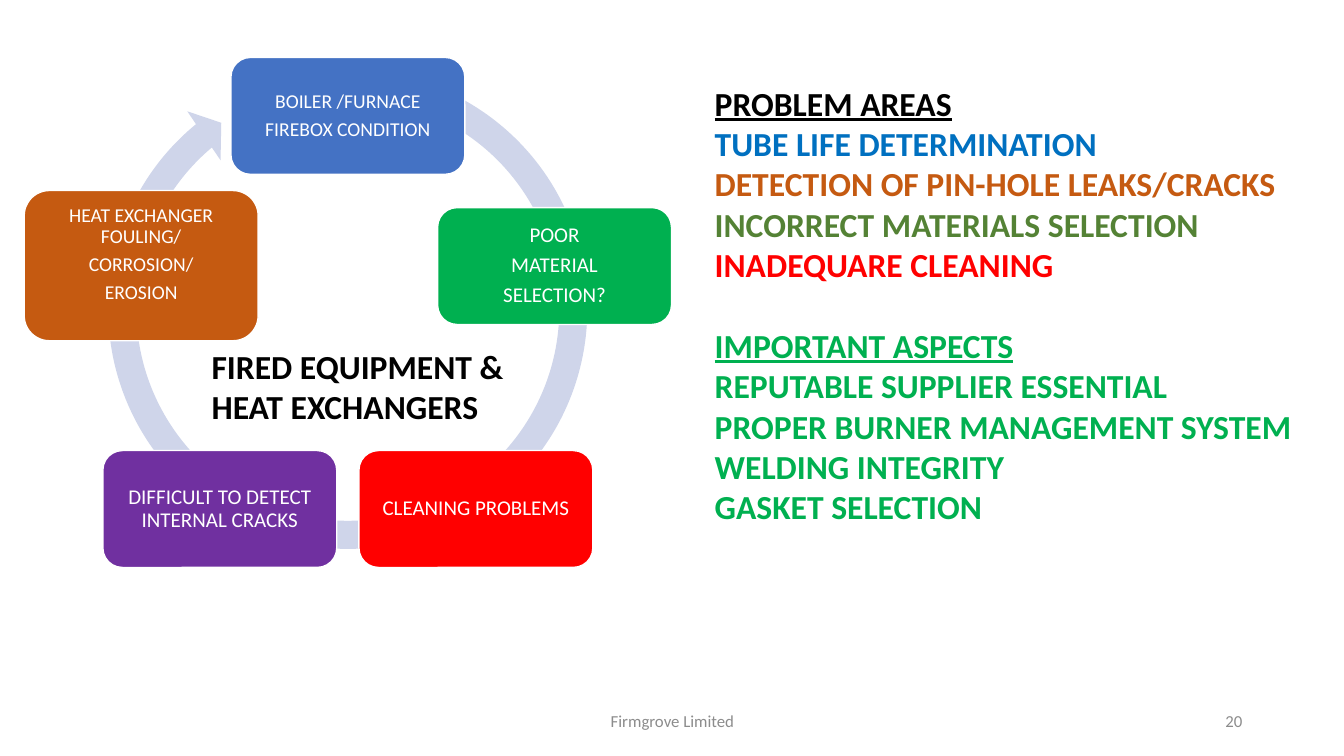
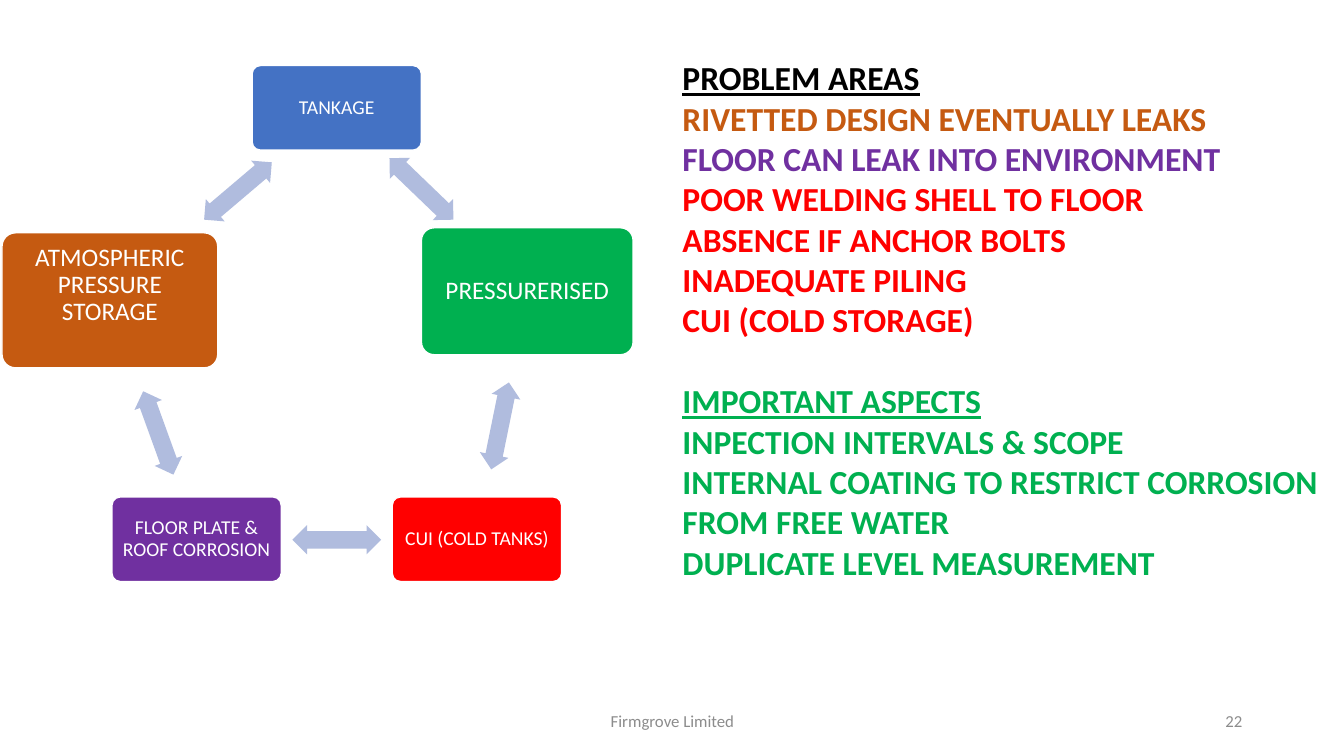
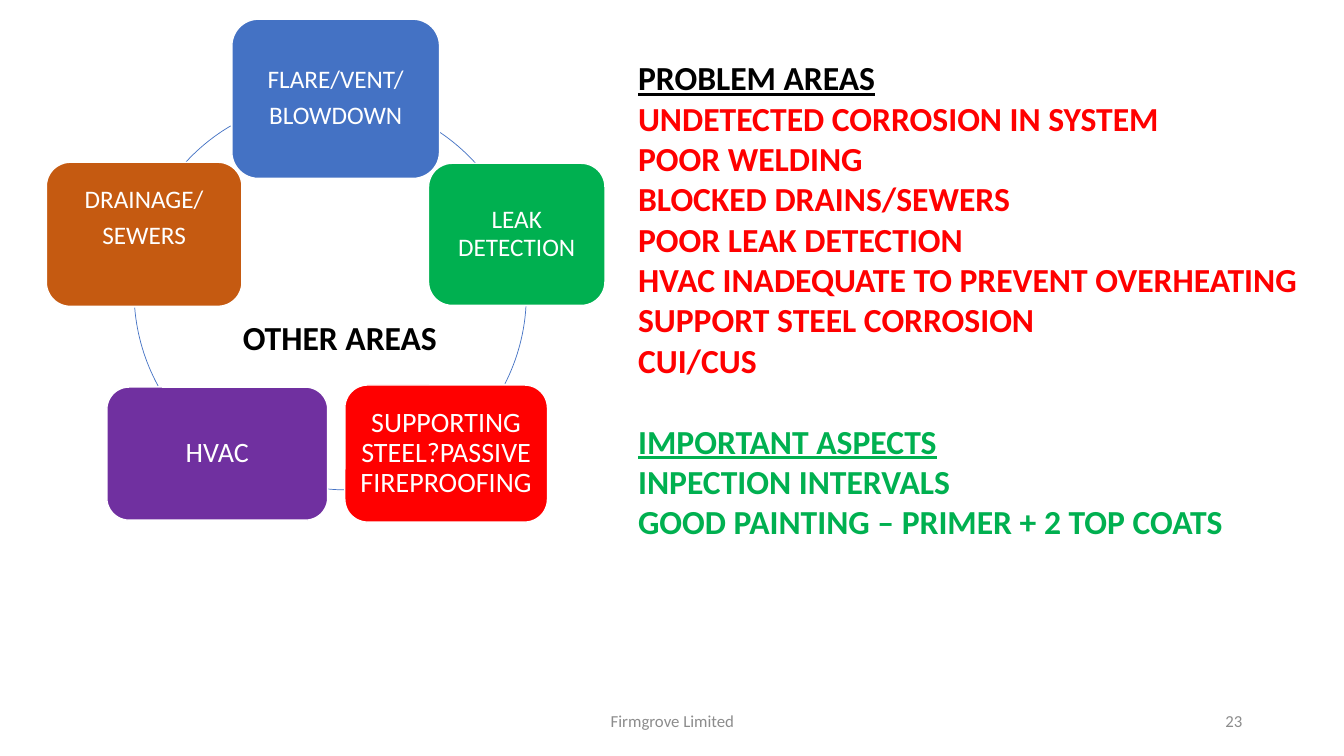
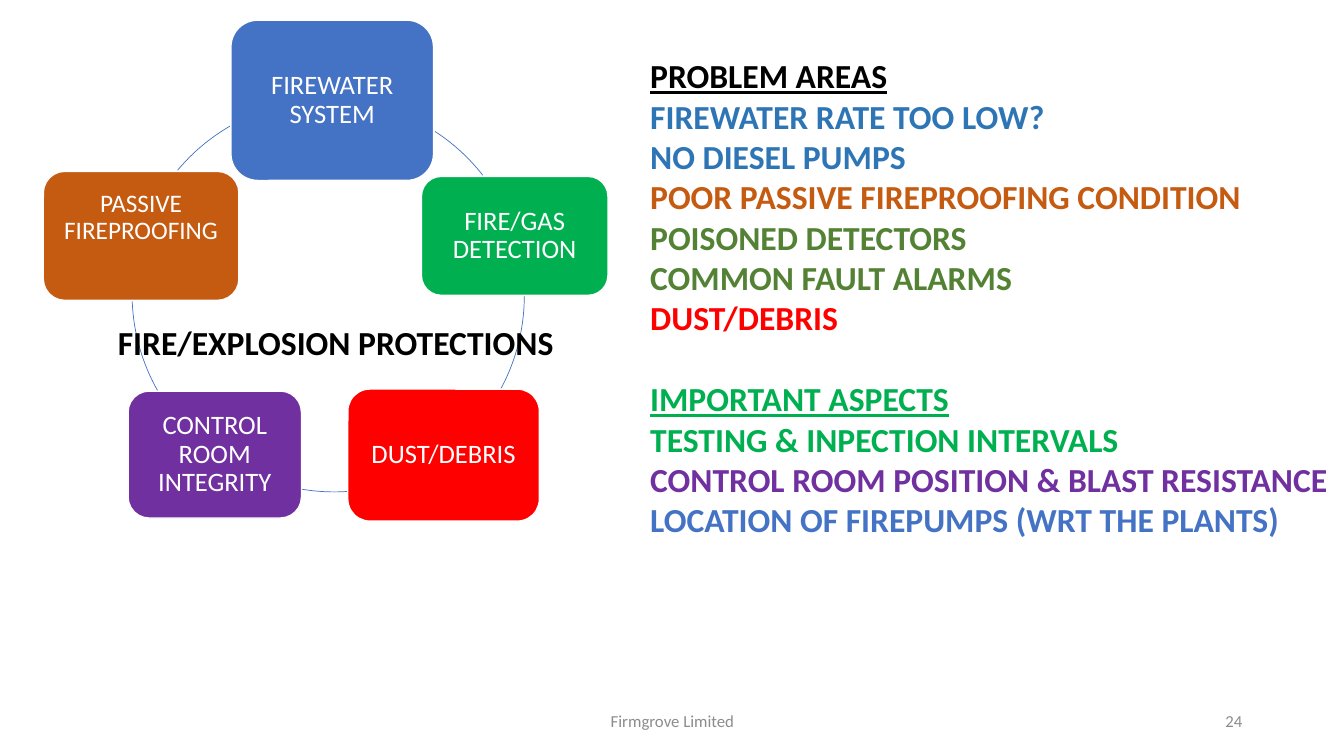
import pptx
import pptx.util
import pptx.dml.color
import pptx.enum.shapes
import pptx.enum.text

SHAPE = pptx.enum.shapes.MSO_SHAPE
ALIGN = pptx.enum.text.PP_ALIGN
ANCHOR = pptx.enum.text.MSO_ANCHOR

# Shared style
FONT = "Calibri"
BLUE, GREEN, RED = "4472C4", "00B050", "FF0000"
PURPLE, ORANGE, OLIVE = "7030A0", "C55A11", "548235"
WHITE, BLACK, GREY = "FFFFFF", "000000", "8C8C8C"
CYCLE = (BLUE, GREEN, RED, PURPLE, ORANGE)  # clockwise from the top
FIRM = "Firmgrove Limited"
DIA = 389  # circle of thin arcs
ARROW = (88, 29)

# Content: boxes are (rect, text size, text, extra room below the text),
# arcs are (left, top, start angle, end angle), arrows are (left, top, turn)
SLIDES = [
    {
        "page": "20",
        "ring": (92, 54, 506, 506),
        "boxes": [
            ((229, 57, 232, 116), 14, "BOILER /FURNACE\nFIREBOX CONDITION", 0),
            ((434, 206, 232, 116), 15, "POOR\nMATERIAL\nSELECTION?", 0),
            ((356, 447, 232, 116), 15, "CLEANING PROBLEMS", 0),
            ((102, 447, 232, 116), 15, "DIFFICULT TO DETECT INTERNAL CRACKS", 0),
            ((24, 189, 232, 149), 14,
             "HEAT EXCHANGER FOULING/\nCORROSION/\nEROSION", 22),
        ],
        "title": ((200, 338, 322, 91), "FIRED EQUIPMENT & HEAT EXCHANGERS"),
        "panel": (699, 77, 626, 528),
        "problems": [
            ("0070C0", ["TUBE LIFE DETERMINATION"]),
            (ORANGE, ["DETECTION OF PIN-HOLE LEAKS/CRACKS"]),
            (OLIVE, ["INCORRECT MATERIALS SELECTION"]),
            (RED, ["INADEQUARE CLEANING"]),
        ],
        "aspects": [
            (GREEN, ["REPUTABLE SUPPLIER ESSENTIAL",
                     "PROPER BURNER MANAGEMENT SYSTEM",
                     "WELDING INTEGRITY", "GASKET SELECTION"]),
        ],
    },
    {
        "page": "22",
        "round": 0.1,
        "boxes": [
            ((250, 65, 168, 84), 14, "TANKAGE", 0),
            ((418, 226, 210, 126), 18, "PRESSURERISED", 0),
            ((389, 493, 168, 84), 14, "CUI (COLD TANKS)", 0),
            ((111, 493, 168, 84), 14, "FLOOR PLATE & ROOF CORROSION", 0),
            ((2, 231, 214, 134), 18, "ATMOSPHERIC PRESSURE STORAGE", 30),
        ],
        "arrows": [(374, 173, 43.9), (452, 408, 101.5), (290, 521, 180),
                   (113, 415, 250.1), (192, 175, 319.7)],
        "panel": (667, 52, 655, 609),
        "problems": [
            (ORANGE, ["RIVETTED DESIGN EVENTUALLY LEAKS"]),
            (PURPLE, ["FLOOR CAN LEAK INTO ENVIRONMENT"]),
            (RED, ["POOR WELDING SHELL TO FLOOR", "ABSENCE IF ANCHOR BOLTS",
                   "INADEQUATE PILING", "CUI (COLD STORAGE)"]),
        ],
        "aspects": [
            (GREEN, ["INPECTION INTERVALS & SCOPE",
                     "INTERNAL COATING TO RESTRICT CORROSION FROM FREE WATER",
                     "DUPLICATE LEVEL MEASUREMENT"]),
        ],
    },
    {
        "page": "23",
        "boxes": [
            ((230, 19, 206, 158), 18, "FLARE/VENT/\nBLOWDOWN", 0),
            ((425, 162, 175, 141), 18, "LEAK DETECTION", 0),
            ((342, 382, 201, 136), 20, "SUPPORTING STEEL?PASSIVE FIREPROOFING", 0),
            ((106, 384, 219, 132), 20, "HVAC", 0),
            ((46, 161, 194, 143), 18, "DRAINAGE/\nSEWERS", 32),
        ],
        "arcs": [(133, 98, 303.7, 317.9), (133, 98, 3.4, 27),
                 (149, 97, 90.4, 95.4), (133, 95, 151.3, 175.4),
                 (133, 98, 222.7, 239.5)],
        "title": ((231, 309, 216, 50), "OTHER AREAS"),
        "panel": (623, 52, 698, 569),
        "problems": [
            (RED, ["UNDETECTED CORROSION IN SYSTEM", "POOR WELDING",
                   "BLOCKED DRAINS/SEWERS", "POOR LEAK DETECTION",
                   "HVAC INADEQUATE TO PREVENT OVERHEATING",
                   "SUPPORT STEEL CORROSION", "CUI/CUS"]),
        ],
        "aspects": [
            (GREEN, ["INPECTION INTERVALS",
                     "GOOD PAINTING – PRIMER + 2 TOP COATS"]),
        ],
    },
    {
        "page": "24",
        "boxes": [
            ((229, 20, 201, 159), 19, "FIREWATER SYSTEM", 0),
            ((418, 175, 185, 118), 19, "FIRE/GAS DETECTION", 0),
            ((345, 386, 190, 131), 19, "DUST/DEBRIS", 0),
            ((127, 388, 172, 126), 19, "CONTROL ROOM INTEGRITY", 0),
            ((43, 170, 194, 128), 18, "PASSIVE FIREPROOFING", 36),
        ],
        "arcs": [(131, 99, 303, 322.1), (131, 99, 0, 28.3),
                 (137, 99, 86, 99.6), (131, 97, 150.3, 177.8),
                 (131, 99, 219.8, 240.2)],
        "title": ((107, 314, 457, 50), "FIRE/EXPLOSION PROTECTIONS"),
        "panel": (635, 50, 698, 528),
        "problems": [
            ("2E75B6", ["FIREWATER RATE TOO LOW?", "NO DIESEL PUMPS"]),
            (ORANGE, ["POOR PASSIVE FIREPROOFING CONDITION"]),
            (OLIVE, ["POISONED DETECTORS", "COMMON FAULT ALARMS"]),
            (RED, ["DUST/DEBRIS"]),
        ],
        "aspects": [
            (GREEN, ["TESTING & INPECTION INTERVALS"]),
            (PURPLE, ["CONTROL ROOM POSITION & BLAST RESISTANCE"]),
            (BLUE, ["LOCATION OF FIREPUMPS (WRT THE PLANTS)"]),
        ],
    },
]


# Helpers
def px(num):
    return pptx.util.Emu(num * 9144)  # 100 px to the inch


def rgb(code):
    return pptx.dml.color.RGBColor.from_string(code)


def put(part, vals):
    for key, val in vals.items():
        setattr(part, key, val)


def write(frame, lines, size, color=BLACK, para=None, **font):
    """Fill a frame; a line is a text or a (text, colour, underline, gap)."""
    frame.word_wrap = True
    for num, line in enumerate(lines):
        text, tint, under, gap = (
            (line, color, None, None) if isinstance(line, str) else line)
        row = frame.add_paragraph() if num else frame.paragraphs[0]
        put(row, para or {})
        if gap:
            row.space_before = pptx.util.Pt(gap)
        run = row.add_run()
        run.text = text
        put(run.font, {"name": FONT, "size": pptx.util.Pt(size),
                       "underline": under, **font})
        run.font.color.rgb = rgb(tint)


def label(slide, rect, lines, size, anchor=ANCHOR.TOP, **style):
    frame = slide.shapes.add_textbox(*map(px, rect)).text_frame
    frame.vertical_anchor = anchor
    write(frame, lines, size, **style)


def draw(slide, kind, rect, fill=None, line=None, width=1, adj=()):
    shape = slide.shapes.add_shape(kind, *map(px, rect))
    shape.shadow.inherit = False
    for part, code in ((shape.fill, fill), (shape.line.fill, line)):
        if code:
            part.solid()
            part.fore_color.rgb = rgb(code)
        else:
            part.background()
    if line:
        shape.line.width = pptx.util.Pt(width)
    for num, val in enumerate(adj):
        shape.adjustments[num] = val
    return shape


def box(slide, rect, size, text, room, fill, curve):
    shape = draw(slide, SHAPE.ROUNDED_RECTANGLE, rect, fill, WHITE, adj=[curve])
    frame, pad = shape.text_frame, round(size * 0.4)
    put(frame, {"vertical_anchor": ANCHOR.MIDDLE,
                "margin_left": px(pad), "margin_right": px(pad),
                "margin_top": px(pad), "margin_bottom": px(pad + room)})
    write(frame, text.split("\n"), size, WHITE,
          {"alignment": ALIGN.CENTER, "line_spacing": 0.9,
           "space_after": pptx.util.Pt(size * 0.35)})


def notes(data):
    rows = []
    for head, tint, gap, key in (("PROBLEM AREAS", BLACK, 0, "problems"),
                                 ("IMPORTANT ASPECTS", GREEN, 29, "aspects")):
        rows.append((head, tint, True, gap))
        rows += [(text, hue, None, 0) for hue, texts in data[key] for text in texts]
    return rows


def footer(slide, page):
    for rect, text, side in (((442, 695, 450, 40), FIRM, ALIGN.CENTER),
                             ((942, 695, 300, 40), page, ALIGN.RIGHT)):
        label(slide, rect, [text], 12, ANCHOR.MIDDLE, color=GREY,
              para={"alignment": side})


def build(slide, data):
    # Cycle: links first, then the boxes over them
    if "ring" in data:
        draw(slide, SHAPE.CIRCULAR_ARROW, data["ring"], "CFD5EA",
             adj=(0.055, 3.307, 138.214, 173.584, 0.058))
    for left, top, *ends in data.get("arcs", []):
        draw(slide, SHAPE.ARC, (left, top, DIA, DIA), line=BLUE, width=0.5,
             adj=[deg * 0.6 for deg in ends])
    for left, top, turn in data.get("arrows", []):
        arrow = draw(slide, SHAPE.LEFT_RIGHT_ARROW, (left, top, *ARROW),
                     "B0BCDE", adj=(0.6, 0.5))
        arrow.rotation = turn
    for item, fill in zip(data["boxes"], CYCLE):
        box(slide, *item, fill, data.get("round", 0.1667))

    # Texts
    label(slide, data["panel"], notes(data), 24, bold=True)
    if "title" in data:
        rect, text = data["title"]
        label(slide, rect, [text], 24, bold=True)
    footer(slide, data["page"])


def main():
    deck = pptx.Presentation()
    put(deck, {"slide_width": px(1333), "slide_height": px(750)})
    for data in SLIDES:
        build(deck.slides.add_slide(deck.slide_layouts[6]), data)
    deck.save("out.pptx")


if __name__ == "__main__":
    main()
